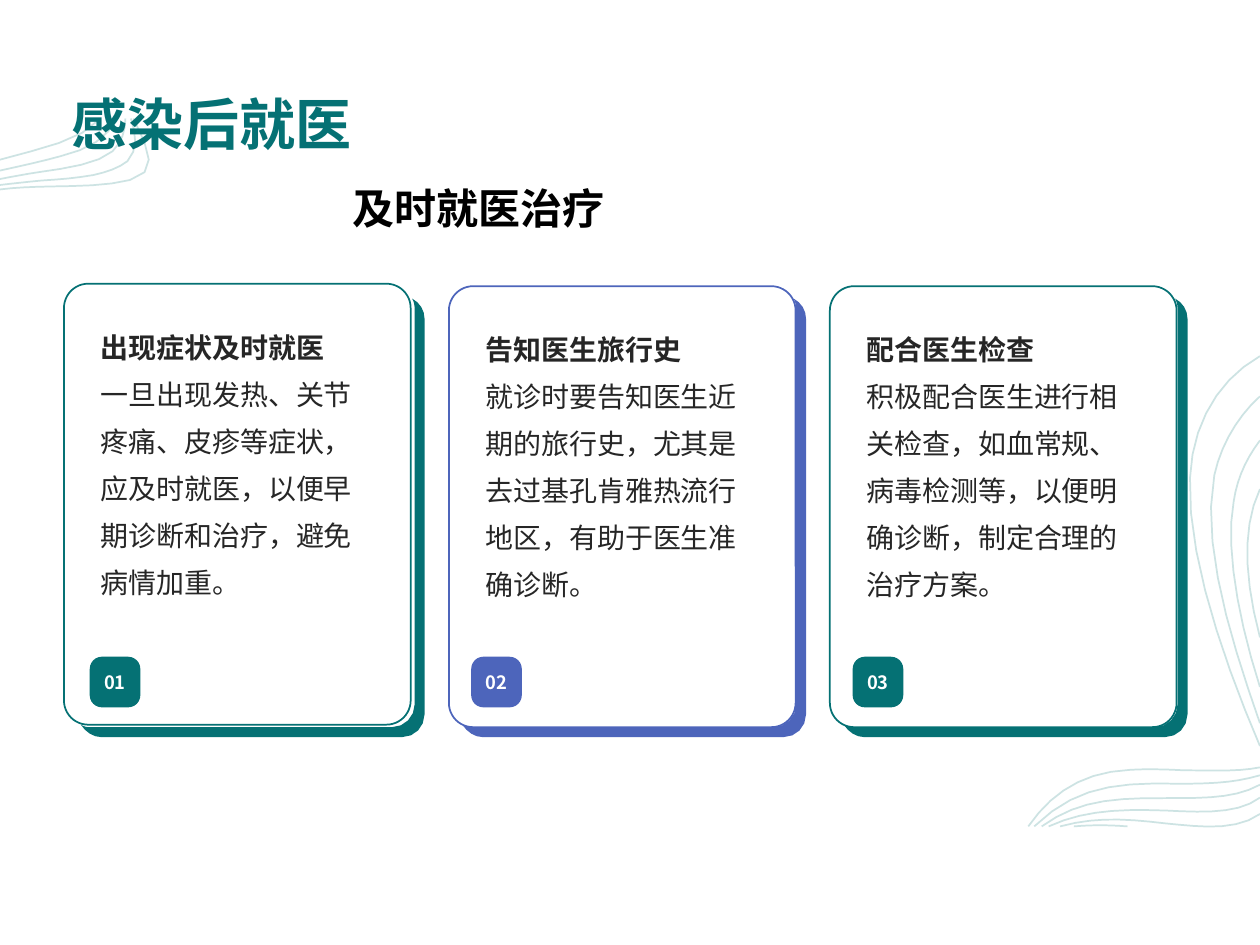
from lxml import etree
from pptx import Presentation
from pptx.dml.color import RGBColor
from pptx.enum.shapes import MSO_SHAPE
from pptx.enum.text import MSO_ANCHOR, PP_ALIGN
from pptx.oxml.ns import qn
from pptx.util import Cm, Pt

ROUNDED = MSO_SHAPE.ROUNDED_RECTANGLE
TOP, MIDDLE, BOTTOM = MSO_ANCHOR.TOP, MSO_ANCHOR.MIDDLE, MSO_ANCHOR.BOTTOM
LEFT, CENTER = PP_ALIGN.LEFT, PP_ALIGN.CENTER

THEME = {
    "teal": RGBColor.from_string("057174"),
    "blue": RGBColor.from_string("4D65BB"),
    "mist": RGBColor.from_string("CDE3E3"),
    "ink": RGBColor.from_string("262626"),
    "black": RGBColor.from_string("000000"),
    "white": RGBColor.from_string("FFFFFF"),
    "font": "Noto Sans CJK SC",
    "title": Pt(32),
    "subtitle": Pt(24),
    "body": Pt(16),
    "badge": Pt(10.5),
}


def write(shape, lines, size, color, frame_format, paragraph_format, font=THEME["font"]):
    frame = shape.text_frame
    for key, value in frame_format.items():
        setattr(frame, key, value)
    for index, line in enumerate(lines):
        paragraph = frame.add_paragraph() if index else frame.paragraphs[0]
        for key, value in paragraph_format.items():
            setattr(paragraph, key, value)
        run = paragraph.add_run()
        run.text = line
        run.font.color.rgb = color
        for key, value in {"name": font, "size": size, "bold": index == 0}.items():
            setattr(run.font, key, value)
        etree.SubElement(run._r.get_or_add_rPr(), qn("a:ea")).set("typeface", font)


def outline(contours, left=0, top=0, close=False, steps=4):
    builder = None
    for start, segments in contours:
        points = [start]
        for segment in segments:
            if len(segment) == 2:
                points.append(segment)
                continue
            (x0, y0), (x1, y1, x2, y2, x3, y3) = points[-1], segment
            for step in range(1, steps + 1):
                t = step / steps
                a, b, c, d = (1 - t) ** 3, 3 * t * (1 - t) ** 2, 3 * t * t * (1 - t), t ** 3
                points.append((a * x0 + b * x1 + c * x2 + d * x3, a * y0 + b * y1 + c * y2 + d * y3))
        placed = [(Cm(left + x), Cm(top + y)) for x, y in points]
        if builder is None:
            builder = slide.shapes.build_freeform(*placed[0])
        else:
            builder.move_to(*placed[0])
        builder.add_line_segments(placed[1:], close=close)
    shape = builder.convert_to_shape()
    shape.shadow.inherit = False
    return shape


deck = Presentation()
deck.slide_width, deck.slide_height = Cm(25.4), Cm(19.05)
slide = deck.slides.add_slide(deck.slide_layouts[6])

left_waves = [
    ((0, 3.22), [(0.9, 2.97, 1.6, 2.85, 2.03, 2.39)]),
    ((0, 3.44), [(0.5, 3.33, 0.86, 3.25, 1.22, 3.15), (1.78, 3.02, 2.2, 2.77, 2.34, 2.39)]),
    ((0, 3.61), [(0.26, 3.56, 0.53, 3.51, 0.79, 3.47), (1.37, 3.39, 1.98, 3.3, 2.27, 3.05),
                 (2.46, 2.87, 2.53, 2.62, 2.53, 2.39)]),
    ((0, 3.73), [(0.26, 3.7, 0.53, 3.67, 0.84, 3.64), (1.19, 3.62, 1.55, 3.59, 1.88, 3.53),
                 (2.16, 3.47, 2.41, 3.38, 2.57, 3.25), (2.79, 3.02, 2.74, 2.69, 2.64, 2.39)]),
    ((0, 3.82), [(0.3, 3.78, 0.64, 3.77, 1.02, 3.76), (1.57, 3.75, 2.16, 3.75, 2.62, 3.63),
                 (3.17, 3.48, 3.06, 3.1, 2.69, 2.39)]),
]
right_waves = [
    ((25.4, 9.86), [(25.05, 10.6, 25.07, 11.6, 25.4, 12.85)]),
    ((25.4, 8.88), [(25.12, 9.25, 24.94, 9.65, 24.87, 10.11), (24.7, 11, 24.95, 12.45, 25.4, 13.85)]),
    ((25.4, 7.99), [(24.97, 8.38, 24.62, 8.94, 24.48, 9.58), (24.2, 11, 24.85, 13, 25.4, 14.58)]),
    ((25.4, 7.18), [(24.6, 7.63, 24.04, 8.5, 23.99, 9.63), (23.92, 11.2, 24.7, 13.4, 25.4, 15.04)]),
    ((25.4, 15.47), [(24.97, 15.56, 24.43, 15.53, 23.88, 15.53), (23.5, 15.51, 23.11, 15.5, 22.78, 15.52),
                     (21.84, 15.56, 21.2, 15.98, 20.73, 16.66)]),
    ((25.4, 15.63), [(24.9, 15.78, 24.4, 15.8, 23.8, 15.8), (22.48, 15.77, 21.7, 15.85, 20.85, 16.66)]),
    ((25.4, 15.82), [(24.9, 16.1, 24.25, 16.09, 23.52, 16.09), (22.35, 16.08, 21.7, 16.16, 21, 16.66)]),
    ((25.4, 16.08), [(24.97, 16.41, 24.25, 16.38, 23.5, 16.34), (22.6, 16.31, 21.85, 16.33, 21.14, 16.66)]),
    ((25.4, 16.41), [(24.9, 16.77, 24.13, 16.66, 23.5, 16.6), (22.73, 16.51, 22.1, 16.46, 21.37, 16.66)]),
    ((21.65, 16.66), [(22, 16.63, 22.35, 16.63, 22.73, 16.66)]),
]
for contours, steps in ((left_waves, 4), (right_waves, 7)):
    waves = outline(contours, steps=steps)
    waves.fill.background()
    waves.line.color.rgb = THEME["mist"]
    waves.line.width = Pt(1)

no_margins = dict.fromkeys(("margin_left", "margin_top", "margin_right", "margin_bottom"), 0)
title = slide.shapes.add_textbox(Cm(1.45), Cm(1.31), Cm(22.5), Cm(1.85))
write(title, ["感染后就医"], THEME["title"], THEME["teal"],
      {"word_wrap": True, "vertical_anchor": BOTTOM, **no_margins}, {"alignment": LEFT})

edge_contour = ((6.68, 0), [
    (6.83, 0.08, 6.93, 0.23, 6.93, 0.41), (6.93, 8.38),
    (6.93, 8.64, 6.73, 8.84, 6.48, 8.84), (0.41, 8.84),
    (0.25, 8.84, 0.1, 8.74, 0, 8.59), (0.08, 8.64, 0.13, 8.64, 0.2, 8.64), (6.27, 8.64),
    (6.53, 8.64, 6.73, 8.43, 6.73, 8.18), (6.73, 0.2),
    (6.73, 0.13, 6.71, 0.05, 6.68, 0),
])
card_frame = {"word_wrap": True, "vertical_anchor": TOP, "margin_left": Cm(0.6),
              "margin_right": Cm(0.6), "margin_top": Cm(0.53), "margin_bottom": Cm(1.45)}
badge_frame = {"word_wrap": False, "vertical_anchor": MIDDLE}
advice = [
    (1.29, 5.72, "teal", "出现症状及时就医",
     "一旦出现发热、关节疼痛、皮疹等症状，应及时就医，以便早期诊断和治疗，避免病情加重。"),
    (9.05, 5.77, "blue", "告知医生旅行史",
     "就诊时要告知医生近期的旅行史，尤其是去过基孔肯雅热流行地区，有助于医生准确诊断。"),
    (16.73, 5.77, "teal", "配合医生检查",
     "积极配合医生进行相关检查，如血常规、病毒检测等，以便明确诊断，制定合理的治疗方案。"),
]
for index, (left, top, accent, heading, detail) in enumerate(advice):
    edge_left = 1.63 + 7.69 * index
    edge = outline([edge_contour], edge_left, 6.02, close=True)
    edge.fill.solid()
    edge.fill.fore_color.rgb = THEME[accent]
    edge.line.fill.background()

    card = slide.shapes.add_shape(ROUNDED, Cm(left), Cm(top), Cm(6.99), Cm(8.89))
    card.adjustments[0] = 0.07
    card.shadow.inherit = False
    card.fill.solid()
    card.fill.fore_color.rgb = THEME["white"]
    card.line.color.rgb = THEME[accent]
    card.line.width = Pt(1)
    if index == 0:
        tint = card._element.spPr.find(qn("a:solidFill")).find(qn("a:srgbClr"))
        etree.SubElement(tint, qn("a:alpha")).set("val", "10000")
    write(card, [heading, detail], THEME["body"], THEME["ink"], card_frame,
          {"alignment": LEFT, "line_spacing": 1.4})

    badge = slide.shapes.add_shape(ROUNDED, Cm(edge_left + 0.18), Cm(13.24), Cm(1.02), Cm(1.02))
    badge.adjustments[0] = 0.24
    badge.shadow.inherit = False
    badge.fill.solid()
    badge.fill.fore_color.rgb = THEME[accent]
    badge.line.fill.background()
    write(badge, [f"{index + 1:02}"], THEME["badge"], THEME["white"], badge_frame, {"alignment": CENTER})

subtitle = slide.shapes.add_textbox(Cm(6.86), Cm(3.56), Cm(12.9), Cm(1.5))
write(subtitle, ["及时就医治疗"], THEME["subtitle"], THEME["black"],
      {"word_wrap": True, "vertical_anchor": TOP}, {"alignment": LEFT}, "Arial")

deck.save("out.pptx")
